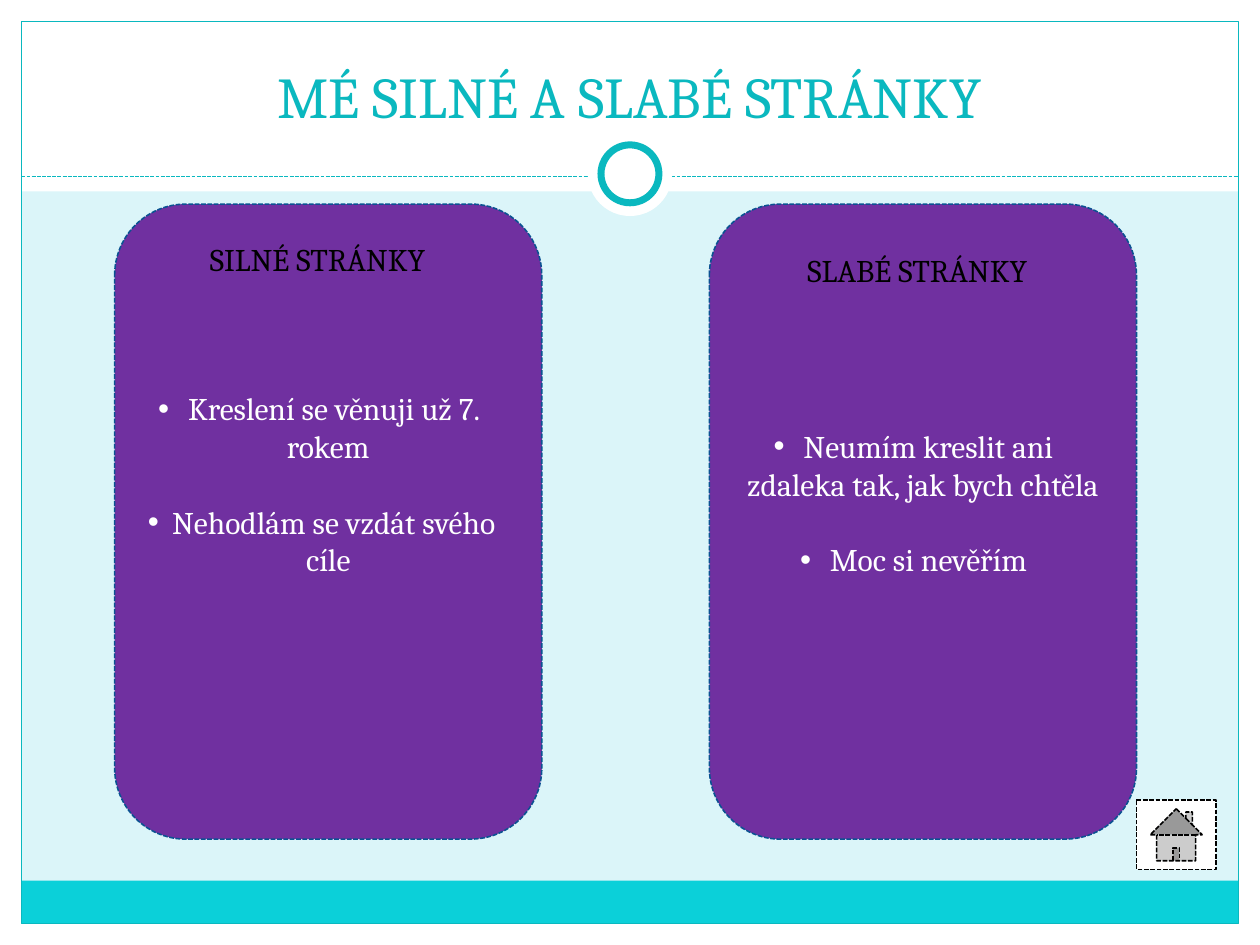
from lxml.etree import SubElement
from pptx import Presentation
from pptx.dml.color import RGBColor
from pptx.enum.dml import MSO_LINE
from pptx.enum.shapes import MSO_CONNECTOR, MSO_SHAPE
from pptx.enum.text import MSO_ANCHOR, PP_ALIGN
from pptx.oxml.ns import qn
from pptx.util import Inches, Pt

WHITE = RGBColor(0xFF, 0xFF, 0xFF)
BLACK = RGBColor(0x00, 0x00, 0x00)
PALE = RGBColor(0xDB, 0xF5, 0xF9)
AQUA = RGBColor(0x0B, 0xD0, 0xD9)
TEAL = RGBColor(0x0A, 0xB8, 0xBF)
PURPLE = RGBColor(0x70, 0x30, 0xA0)
NAVY = RGBColor(0x0B, 0x52, 0x92)

COLS, ROWS = 100, 75  # grid units across and down the slide
EDGE = 1.7
LINE_HEIGHT = 0.3  # inches, one line of 18 pt text


class SlideBuilder:
    """Places styled elements; lengths are columns and rows of the grid."""

    def __init__(self, prs, font, background):
        self.prs = prs
        self.font = font
        self.slide = prs.slides.add_slide(prs.slide_layouts[6])
        fill = self.slide.background.fill
        fill.solid()
        fill.fore_color.rgb = background

    def grid(self, x, y):
        return (round(self.prs.slide_width * x / COLS),
                round(self.prs.slide_height * y / ROWS))

    def outline(self, line, color, width, dashed):
        line.color.rgb = color
        line.width = Pt(width)
        if dashed:
            line.dash_style = MSO_LINE.SQUARE_DOT

    def shape(self, kind, x, y, w, h, fill=None, line=None, width=0.75, dashed=False):
        sp = self.slide.shapes.add_shape(kind, *self.grid(x, y), *self.grid(w, h))
        sp.shadow.inherit = False
        if fill is None:
            sp.fill.background()
        else:
            sp.fill.solid()
            sp.fill.fore_color.rgb = fill
        if line is None:
            sp.line.fill.background()
        else:
            self.outline(sp.line, line, width, dashed)
        return sp

    def rect(self, *box, **style):
        return self.shape(MSO_SHAPE.RECTANGLE, *box, **style)

    def circle(self, cx, cy, size, **style):
        return self.shape(MSO_SHAPE.OVAL, cx - size / 2, cy - size / 2, size, size, **style)

    def divider(self, x1, x2, y, color):
        cn = self.slide.shapes.add_connector(
            MSO_CONNECTOR.STRAIGHT, *self.grid(x1, y), *self.grid(x2, y))
        self.outline(cn.line, color, 0.75, True)
        SubElement(cn._element.spPr, qn("a:effectLst"))

    def add_text(self, p, text, size, color):
        p.alignment = PP_ALIGN.CENTER
        r = p.add_run()
        r.text = text
        r.font.name = self.font
        r.font.size = Pt(size)
        r.font.color.rgb = color

    def text_box(self, x, y, w, h, text, size, color, anchor=MSO_ANCHOR.TOP):
        tf = self.slide.shapes.add_textbox(*self.grid(x, y), *self.grid(w, h)).text_frame
        tf.word_wrap = True
        tf.vertical_anchor = anchor
        self.add_text(tf.paragraphs[0], text, size, color)

    def card(self, x, y, w, h, points, lift):
        """Rounded card with bullets; lift is the lines kept free below them."""
        sp = self.shape(MSO_SHAPE.ROUNDED_RECTANGLE, x, y, w, h,
                        fill=PURPLE, line=NAVY, width=0.9, dashed=True)
        tf = sp.text_frame
        tf.word_wrap = True
        tf.vertical_anchor = MSO_ANCHOR.MIDDLE
        tf.margin_bottom = Inches(0.05 + lift * LINE_HEIGHT)
        for i, point in enumerate(points):
            p = tf.add_paragraph() if i else tf.paragraphs[0]
            if i:
                p.space_before = Inches(LINE_HEIGHT)
            self.add_text(p, point, 18, WHITE)
            pPr = p._p.get_or_add_pPr()
            SubElement(pPr, qn("a:buFont")).set("typeface", "Arial")
            SubElement(pPr, qn("a:buChar")).set("char", "•")


def main():
    prs = Presentation()
    prs.slide_width, prs.slide_height = Inches(10), Inches(7.5)
    s = SlideBuilder(prs, "Cambria", PALE)
    inner_w, inner_h = COLS - 2 * EDGE, ROWS - 2 * EDGE

    for box in ((0, ROWS - EDGE, COLS, EDGE), (0, 0, COLS, 15.2),
                (0, 0, EDGE, ROWS), (COLS - EDGE, 0, EDGE, ROWS)):
        s.rect(*box, fill=WHITE)
    s.rect(EDGE, 69.9, inner_w, 3.4, fill=AQUA)
    s.rect(EDGE, EDGE, inner_w, inner_h, line=TEAL)
    s.divider(EDGE, COLS - EDGE, 14, TEAL)
    s.circle(COLS / 2, 13.8, 6.7, fill=WHITE)
    s.circle(COLS / 2, 13.8, 4.6, fill=WHITE, line=TEAL, width=4)

    s.text_box(3.3, 2.5, 93.3, 8.3, "MÉ SILNÉ A SLABÉ STRÁNKY", 33, TEAL, MSO_ANCHOR.BOTTOM)

    s.card(9.1, 16.2, 33.9, 50.4,
           ("Kreslení se věnuji už 7. rokem", "Nehodlám se vzdát svého cíle"), lift=2)
    s.card(56.3, 16.2, 33.9, 50.4,
           ("Neumím kreslit ani zdaleka tak, jak bych chtěla", "Moc si nevěřím"), lift=1)
    s.text_box(11.4, 18.6, 27.6, 4, "SILNÉ STRÁNKY", 18, BLACK)
    s.text_box(59.4, 19.4, 26.8, 4, "SLABÉ STRÁNKY", 18, BLACK)

    s.shape(MSO_SHAPE.ACTION_BUTTON_HOME, 90.2, 63.5, 6.3, 5.5,
            fill=WHITE, line=BLACK, width=0.9, dashed=True)

    prs.save("out.pptx")


if __name__ == "__main__":
    main()
